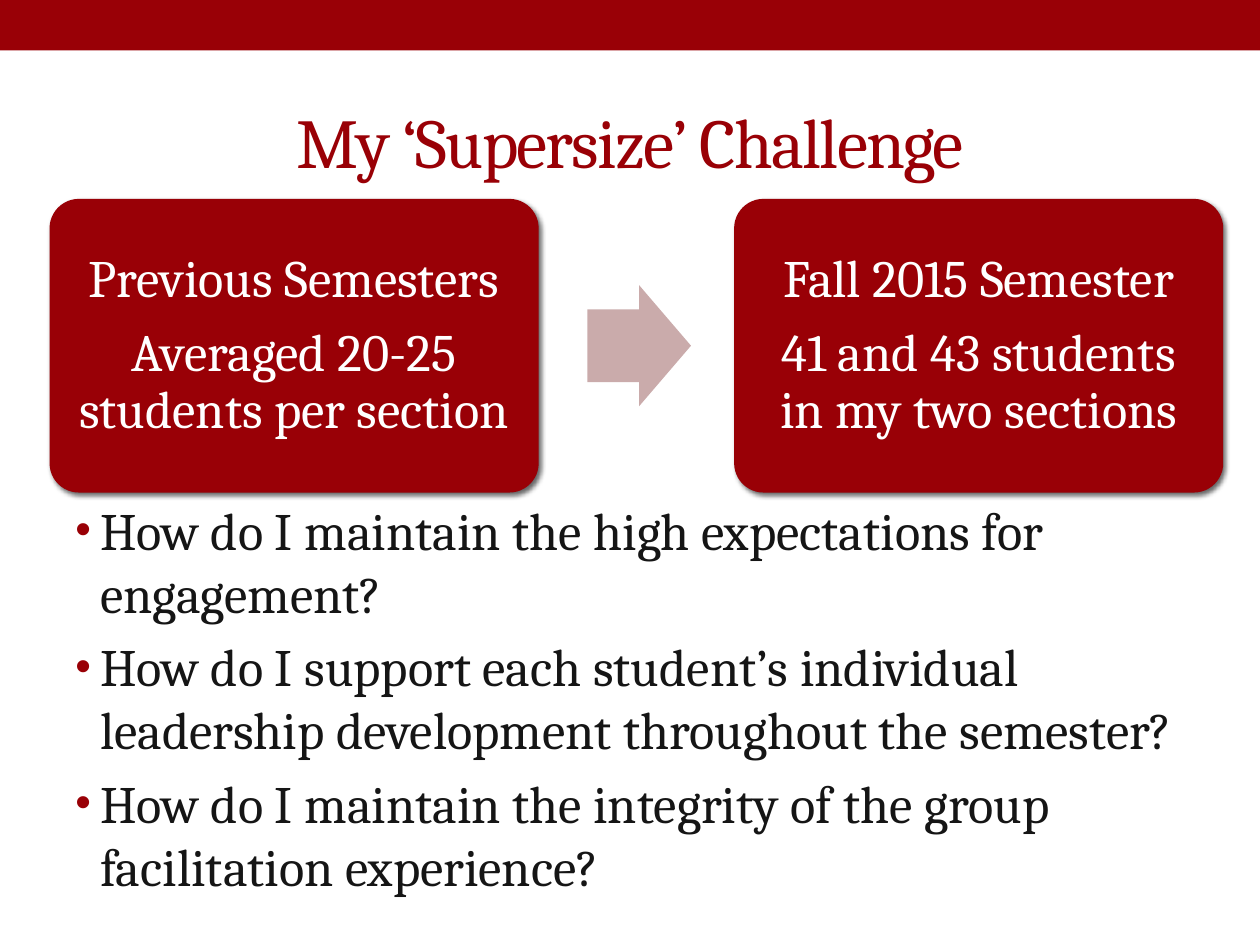
from lxml.etree import SubElement as Sub
from pptx import Presentation
from pptx.dml.color import RGBColor as RGB
from pptx.enum.shapes import MSO_SHAPE as Shape
from pptx.enum.text import MSO_ANCHOR as Anchor, PP_ALIGN as Align
from pptx.oxml.ns import qn
from pptx.util import Cm, Pt

RED = RGB(0x99, 0x00, 0x06)
PINK = RGB(0xCA, 0xAB, 0xAB)
INK = RGB(0x15, 0x15, 0x15)
WHITE = RGB(0xFF, 0xFF, 0xFF)
FONT = "Cambria"

CARDS = [
    ["Previous Semesters", "Averaged 20-25 students per section"],
    ["Fall 2015 Semester", "41 and 43 students in my two sections"],
]
ASKS = [
    "How do I maintain the high expectations for engagement?",
    "How do I support each student’s individual leadership development "
    "throughout the semester?",
    "How do I maintain the integrity of the group facilitation experience?",
]


def add_form(slide, kind, box, fill):
    form = slide.shapes.add_shape(kind, *map(Cm, box))
    form.shadow.inherit = False
    form.fill.solid()
    form.fill.fore_color.rgb = fill
    form.line.fill.background()
    return form


def add_text(slide, box):
    frame = slide.shapes.add_textbox(*map(Cm, box)).text_frame
    frame.word_wrap = True
    return frame


def write(frame, lines, size, color, align):
    """Fill the frame with one paragraph per line; return the paragraphs."""
    for i, line in enumerate(lines):
        para = frame.add_paragraph() if i else frame.paragraphs[0]
        para.alignment = align
        run = para.add_run()
        run.text = line
        run.font.name = FONT
        run.font.size = Pt(size)
        run.font.color.rgb = color
    return frame.paragraphs


def cast(form):
    """Give the form a soft shadow to the lower right."""
    list_ = form._element.spPr.find(qn("a:effectLst"))
    shade = Sub(list_, qn("a:outerShdw"), blurRad=str(Pt(3)),
                dist=str(Pt(2)), dir="2700000", rotWithShape="0")
    tone = Sub(shade, qn("a:srgbClr"), val="000000")
    Sub(tone, qn("a:alpha"), val="60000")


def add_title(slide, box):
    frame = add_text(slide, box)
    frame.vertical_anchor = Anchor.MIDDLE
    para, = write(frame, ["My ‘Supersize’ Challenge"], 40, RED, Align.CENTER)
    para.runs[0].font._element.set("spc", "-100")


def add_card(slide, box, lines):
    card = add_form(slide, Shape.ROUNDED_RECTANGLE, box, RED)
    card.adjustments[0] = 0.1
    cast(card)
    frame = card.text_frame
    frame.word_wrap = True
    frame.vertical_anchor = Anchor.MIDDLE
    frame.margin_left = frame.margin_right = Cm(0.3)
    frame.margin_top = frame.margin_bottom = Cm(0.3)
    for para in write(frame, lines, 30, WHITE, Align.CENTER):
        para.line_spacing = 0.9
        para.space_after = Pt(10)


def add_flow(slide, box):
    """Two cards at the ends of the box, an arrow in the gap."""
    left, top, width, height = box
    wide = 9.86
    for x, lines in zip((left, left + width - wide), CARDS):
        add_card(slide, (x, top, wide, height), lines)
    tall = 2.44
    arrow = add_form(slide, Shape.RIGHT_ARROW,
                     (left + 10.84, top + (height - tall) / 2, 2.09, tall),
                     PINK)
    arrow.adjustments[0] = 0.6


def add_asks(slide, box):
    for para in write(add_text(slide, box), ASKS, 30, INK, Align.LEFT):
        para.space_before = Pt(6)
        props = para._p.get_or_add_pPr()
        props.set("marL", str(Cm(0.5)))
        props.set("indent", str(Cm(-0.5)))
        Sub(Sub(props, qn("a:buClr")), qn("a:srgbClr"), val=str(RED))
        Sub(props, qn("a:buSzPct"), val="85000")
        Sub(props, qn("a:buFont"), typeface="Arial")
        Sub(props, qn("a:buChar"), char="•")


def main():
    deck = Presentation()
    deck.slide_width, deck.slide_height = Cm(25.4), Cm(19.05)
    slide = deck.slides.add_slide(deck.slide_layouts[6])
    # Top band
    add_form(slide, Shape.RECTANGLE, (0, 0, 25.4, 1.02), RED)
    # Heading, change in class size, questions
    add_title(slide, (1.27, 1.47, 22.86, 2.74))
    add_flow(slide, (1, 4.01, 23.66, 5.92))
    add_asks(slide, (1.27, 9.91, 22.86, 9.14))
    deck.save("out.pptx")


if __name__ == "__main__":
    main()
